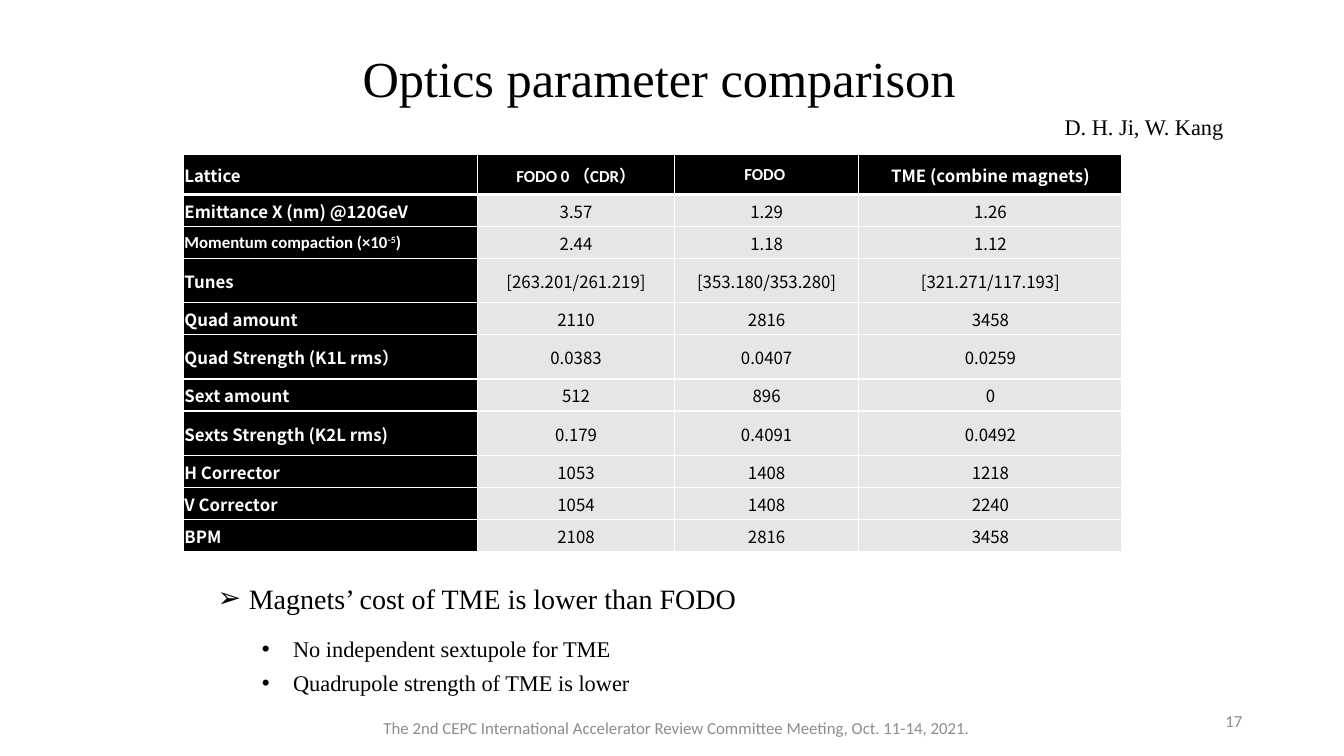
from pptx import Presentation
from pptx.dml.color import RGBColor
from pptx.enum.text import MSO_ANCHOR, PP_ALIGN
from pptx.oxml import parse_xml
from pptx.oxml.ns import nsdecls
from pptx.util import Inches, Pt

WIDTH, HEIGHT = Inches(13.33), Inches(7.5)
BLACK = RGBColor(0x00, 0x00, 0x00)
WHITE = RGBColor(0xFF, 0xFF, 0xFF)
LIGHT = RGBColor(0xE7, 0xE6, 0xE6)
GREY = RGBColor(0x8C, 0x8C, 0x8C)
SERIF, SANS, CJK = "Times New Roman", "Calibri", "Noto Sans CJK SC"

# Table layout, in percent of the slide's width and height
COLUMNS = [21.9, 14.63, 13.73, 19.58]
HEADER_ROW, LOW_ROW, TALL_ROW = 5.33, 4.23, 5.87
TALL_LABELS = ("Tunes", "Quad Strength (K1L rms）", "Sexts Strength (K2L rms)")
COMPACTION = "Momentum compaction (×10"
CALIBRI_CELLS = ("FODO 0 （CDR）", "FODO ", COMPACTION)

PARAMETERS = [
    ("Lattice ", "FODO 0 （CDR）", "FODO ", "TME (combine magnets)"),
    ("Emittance X (nm) @120GeV", "3.57", "1.29", "1.26"),
    (COMPACTION, "2.44", "1.18", "1.12"),
    ("Tunes", "[263.201/261.219]", "[353.180/353.280]", "[321.271/117.193]"),
    ("Quad amount", "2110", "2816", "3458"),
    ("Quad Strength (K1L rms）", "0.0383", "0.0407", "0.0259"),
    ("Sext amount", "512", "896", "0"),
    ("Sexts Strength (K2L rms)", "0.179", "0.4091", "0.0492"),
    ("H Corrector", "1053", "1408", "1218"),
    ("V Corrector", "1054", "1408", "2240"),
    ("BPM", "2108", "2816", "3458"),
]


def across(percent):
    return int(WIDTH * percent / 100)


def down(percent):
    return int(HEIGHT * percent / 100)


def add_run(p, text, size, font, color, bold=False):
    r = p.add_run()
    r.text = text
    r.font.size, r.font.name, r.font.bold = Pt(size), font, bold
    r.font.color.rgb = color
    r.font._element.append(parse_xml(f'<a:ea {nsdecls("a")} typeface="{CJK}"/>'))
    return r


def add_bullet(p, char):
    pPr = p._p.get_or_add_pPr()
    pPr.set("marL", str(Inches(0.31)))
    pPr.set("indent", str(-Inches(0.31)))
    pPr.append(parse_xml(f'<a:buFont {nsdecls("a")} typeface="Arial"/>'))
    pPr.append(parse_xml(f'<a:buChar {nsdecls("a")} char="{char}"/>'))


def add_text(slide, box, lines, size, font=SERIF, color=BLACK, align=PP_ALIGN.LEFT,
             anchor=MSO_ANCHOR.TOP, bullet=None, spacing=None):
    left, top, width, height = box
    tf = slide.shapes.add_textbox(across(left), down(top), across(width), down(height)).text_frame
    tf.word_wrap = True
    tf.vertical_anchor = anchor
    for i, line in enumerate(lines):
        p = tf.add_paragraph() if i else tf.paragraphs[0]
        p.alignment = align
        if spacing:
            p.line_spacing = Pt(spacing)
        if bullet:
            add_bullet(p, bullet)
        add_run(p, line, size, font, color)


def set_borders(cell, top, bottom):
    tcPr = cell._tc.get_or_add_tcPr()
    sides = {"lnL": 1, "lnR": 1, "lnT": top, "lnB": bottom}
    for i, (side, points) in enumerate(sides.items()):
        tcPr.insert(i, parse_xml(
            f'<a:{side} {nsdecls("a")} w="{Pt(points)}"><a:solidFill>'
            f'<a:srgbClr val="{WHITE}"/></a:solidFill></a:{side}>'))


def fill_cell(cell, text, row, col):
    heading = row == 0 or col == 0
    cell.fill.solid()
    cell.fill.fore_color.rgb = BLACK if heading else LIGHT
    cell.margin_left = cell.margin_right = cell.margin_top = Inches(0.01)
    cell.margin_bottom = 0
    cell.vertical_anchor = MSO_ANCHOR.MIDDLE
    set_borders(cell, top=3 if row == 1 else 1, bottom=3 if row == 0 else 1)
    p = cell.text_frame.paragraphs[0]
    p.alignment = PP_ALIGN.CENTER if col else PP_ALIGN.LEFT
    style = (12, SANS if text in CALIBRI_CELLS else CJK, WHITE if heading else BLACK, heading)
    add_run(p, text, *style)
    if text == COMPACTION:
        exponent = add_run(p, "-5", *style)
        exponent.font._element.set("baseline", "30000")
        add_run(p, ")", *style)


def add_parameter_table(slide, left, top):
    heights = [HEADER_ROW] + [TALL_ROW if row[0] in TALL_LABELS else LOW_ROW
                              for row in PARAMETERS[1:]]
    table = slide.shapes.add_table(len(heights), len(COLUMNS), across(left), down(top),
                                   across(sum(COLUMNS)), down(sum(heights))).table
    table.first_row = table.horz_banding = False
    for column, width in zip(table.columns, COLUMNS):
        column.width = across(width)
    for i, (height, values) in enumerate(zip(heights, PARAMETERS)):
        table.rows[i].height = down(height)
        for j, value in enumerate(values):
            fill_cell(table.cell(i, j), value, i, j)


def main():
    prs = Presentation()
    prs.slide_width, prs.slide_height = WIDTH, HEIGHT
    s = prs.slides.add_slide(prs.slide_layouts[6])

    # Table, title and authors
    add_parameter_table(s, 13.65, 20.4)
    add_text(s, (19.28, 5.6, 59.56, 9.47), ["Optics parameter comparison"], 36,
             align=PP_ALIGN.CENTER)
    add_text(s, (78.47, 14.27, 15.6, 4.93), ["D. H. Ji, W. Kang"], 16)

    # Conclusions
    add_text(s, (15.45, 76.27, 49.51, 5.87), ["Magnets’ cost of TME is lower than FODO"], 20,
             bullet="➢")
    add_text(s, (18.75, 82.53, 42.69, 9.87),
             ["No independent sextupole for TME", "Quadrupole strength of TME is lower"], 16,
             bullet="•", spacing=24)

    # Footer and slide number
    meeting = "The 2nd CEPC International Accelerator Review Committee Meeting, Oct. 11-14, 2021. "
    add_text(s, (24.61, 93.6, 51.76, 5.33), [meeting], 12, SANS, GREY,
             PP_ALIGN.CENTER, MSO_ANCHOR.MIDDLE)
    add_text(s, (70.67, 92.67, 22.51, 5.33), ["17"], 12, SANS, GREY,
             PP_ALIGN.RIGHT, MSO_ANCHOR.MIDDLE)

    prs.save("out.pptx")


main()
